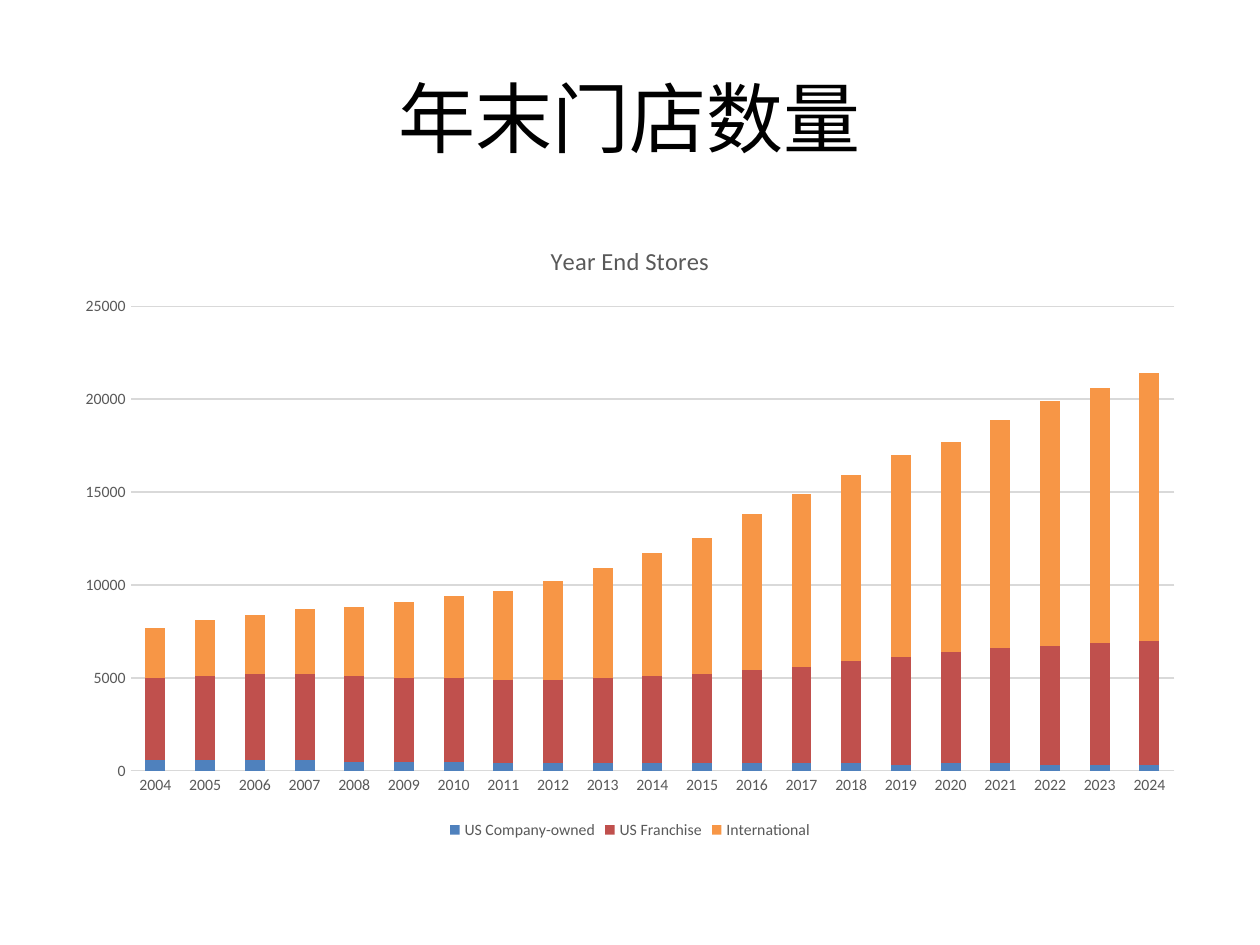
from pptx import Presentation
from pptx.chart.data import CategoryChartData
from pptx.dml.color import RGBColor
from pptx.enum.chart import XL_CHART_TYPE, XL_LEGEND_POSITION, XL_TICK_MARK
from pptx.enum.text import MSO_ANCHOR, PP_ALIGN
from pptx.util import Pt

# Content
TITLE = "年末门店数量"
CHART_TITLE = "Year End Stores"
YEARS = [str(year) for year in range(2004, 2025)]
STORES = [
    ("US Company-owned", "4F81BD",
     [600, 600, 600, 600, 500, 500, 500, 400, 400, 400, 400,
      400, 400, 400, 400, 300, 400, 400, 300, 300, 300]),
    ("US Franchise", "C0504D",
     [4400, 4500, 4600, 4600, 4600, 4500, 4500, 4500, 4500, 4600, 4700,
      4800, 5000, 5200, 5500, 5800, 6000, 6200, 6400, 6600, 6700]),
    ("International", "F79646",
     [2700, 3000, 3200, 3500, 3700, 4100, 4400, 4800, 5300, 5900, 6600,
      7300, 8400, 9300, 10000, 10900, 11300, 12300, 13200, 13700, 14400]),
]
FONT = "Calibri"
TEXT_GREY = "595959"
LINE_GREY = "D9D9D9"
MARGIN, CONTENT_WIDTH = 36, 648


def color(hex_string):
    return RGBColor.from_string(hex_string)


def style_font(font, size, hex_string):
    font.name = FONT
    font.size = Pt(size)
    font.bold = False
    font.color.rgb = color(hex_string)


def style_line(line, hex_string):
    line.width = Pt(0.75)
    line.color.rgb = color(hex_string)


deck = Presentation()
deck.slide_width, deck.slide_height = Pt(720), Pt(540)
page = deck.slides.add_slide(deck.slide_layouts[5])

# Slide title
title = page.shapes.title
title.left, title.top = Pt(MARGIN), Pt(21.6)
title.width, title.height = Pt(CONTENT_WIDTH), Pt(90)
title.text_frame.text = TITLE
title.text_frame.vertical_anchor = MSO_ANCHOR.MIDDLE
heading = title.text_frame.paragraphs[0]
heading.alignment = PP_ALIGN.CENTER
style_font(heading.font, 44, "000000")

# Stacked column chart
data = CategoryChartData()
data.categories = YEARS
for name, _, values in STORES:
    data.add_series(name, values)
chart = page.shapes.add_chart(
    XL_CHART_TYPE.COLUMN_STACKED,
    Pt(MARGIN), Pt(126), Pt(CONTENT_WIDTH), Pt(356.4), data).chart
style_font(chart.font, 10, "000000")

plot = chart.plots[0]
plot.gap_width, plot.overlap = 150, 100
plot.vary_by_categories = False
for series, (_, fill, _) in zip(plot.series, STORES):
    series.format.fill.solid()
    series.format.fill.fore_color.rgb = color(fill)

# Chart title and legend
chart.has_title = True
chart.chart_title.include_in_layout = False
chart.chart_title.text_frame.text = CHART_TITLE
style_font(chart.chart_title.text_frame.paragraphs[0].font, 14, TEXT_GREY)
chart.has_legend = True
chart.legend.position = XL_LEGEND_POSITION.BOTTOM
chart.legend.include_in_layout = False
style_font(chart.legend.font, 9, TEXT_GREY)

# Axes
for axis in (chart.category_axis, chart.value_axis):
    axis.major_tick_mark = axis.minor_tick_mark = XL_TICK_MARK.NONE
    style_font(axis.tick_labels.font, 9, TEXT_GREY)
style_line(chart.category_axis.format.line, LINE_GREY)
values_axis = chart.value_axis
values_axis.minimum_scale, values_axis.maximum_scale = 0, 25000
values_axis.major_unit = 5000
values_axis.format.line.fill.background()
values_axis.has_major_gridlines = True
style_line(values_axis.major_gridlines.format.line, LINE_GREY)

deck.save("out.pptx")
